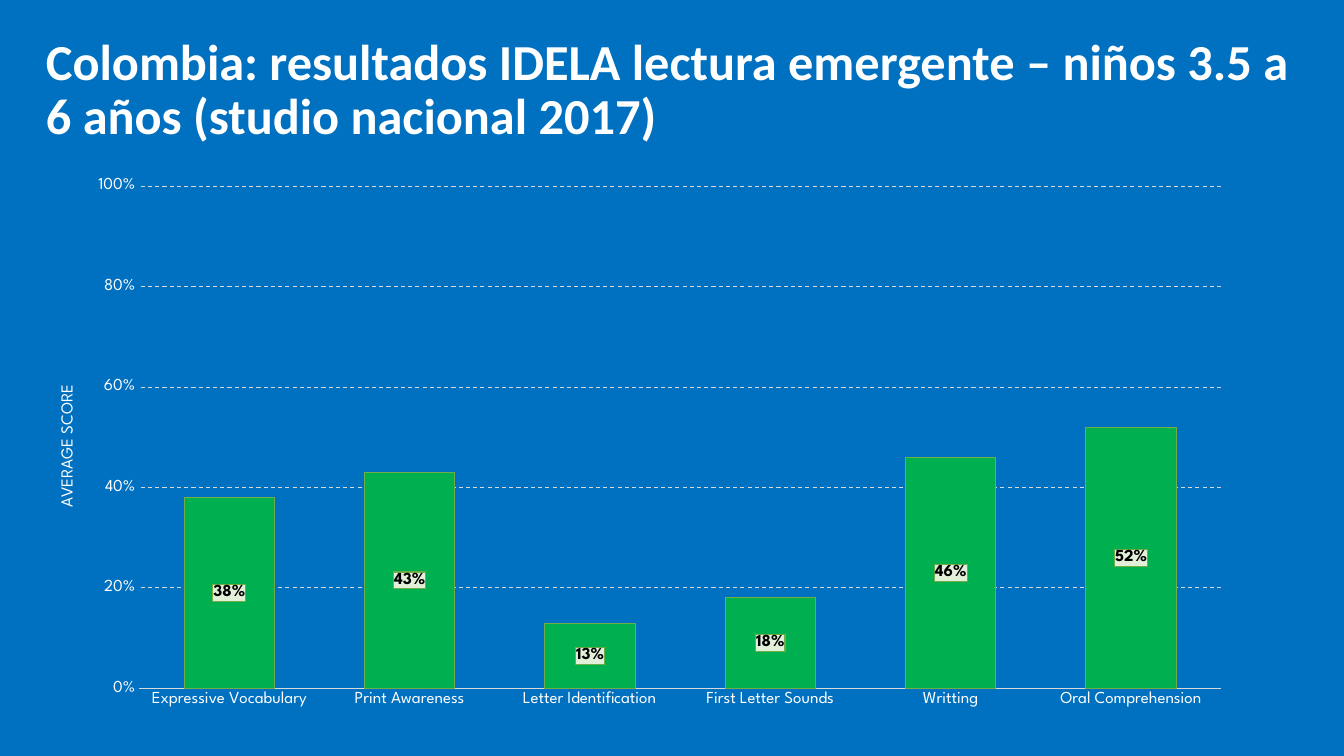
from lxml import etree
from pptx import Presentation
from pptx.chart.data import CategoryChartData
from pptx.dml.color import RGBColor
from pptx.enum.chart import XL_CHART_TYPE as ChartType
from pptx.enum.chart import XL_LABEL_POSITION as LabelPosition
from pptx.enum.chart import XL_TICK_MARK as TickMark
from pptx.enum.dml import MSO_LINE_DASH_STYLE as Dash
from pptx.enum.text import MSO_ANCHOR as Anchor
from pptx.oxml import parse_xml
from pptx.oxml.ns import nsdecls, qn
from pptx.util import Emu, Pt

# Content
TITLE = "Colombia: resultados IDELA lectura emergente – niños 3.5 a 6 años (studio nacional 2017)"
AXIS_TITLE = "AVERAGE SCORE"
SERIES_NAME = "Series 1"
SCORES = {
    "Expressive Vocabulary": 0.38,
    "Print Awareness": 0.43,
    "Letter Identification": 0.13,
    "First Letter Sounds": 0.18,
    "Writting": 0.46,
    "Oral Comprehension": 0.52,
}

# Lengths in px: left, top, width, height
PX = 9071
SLIDE_SIZE = (1344, 756)
TITLE_BOX = (36, 18, 1270, 146)
CHART_BOX = (56, 164, 1189, 558)
PLOT_LAYOUT = {"x": 0.07, "y": 0.04, "w": 0.91, "h": 0.9}
AXIS_TITLE_LAYOUT = {"x": 0.0, "y": 0.39}


class Theme:
    background = "0070C0"
    text = "FFFFFF"
    rule = "D9D9D9"
    bar = "00B050"
    bar_line = "70AD47"
    label_fill = "E2F0D9"
    label_text = "000000"
    title_font = "Calibri"
    chart_font = "League Spartan"
    title_size = 36
    chart_size = 12
    line_width = 0.75


def px(values):
    return [Emu(value * PX) for value in values]


def style_font(font, name=Theme.chart_font, size=Theme.chart_size,
               color=Theme.text, bold=False):
    font.name = name
    font.size = Pt(size)
    font.bold = bold
    font.color.rgb = RGBColor.from_string(color)


def write_text(text_frame, text, line_spacing=None, **font_format):
    paragraph = text_frame.paragraphs[0]
    paragraph.line_spacing = line_spacing
    run = paragraph.add_run()
    run.text = text
    style_font(run.font, **font_format)


def style_line(line, color):
    line.color.rgb = RGBColor.from_string(color)
    line.width = Pt(Theme.line_width)


def set_layout(parent, index, fractions, inner=False):
    """Place a chart part by fractions of the chart's size."""
    for old_layout in parent.findall(qn("c:layout")):
        parent.remove(old_layout)
    layout = parse_xml(f"<c:layout {nsdecls('c')}><c:manualLayout/></c:layout>")
    settings = [("layoutTarget", "inner")] if inner else []
    settings += [(f"{key}Mode", "edge") for key in "xy"]
    settings += fractions.items()
    for tag, value in settings:
        etree.SubElement(layout[0], qn(f"c:{tag}")).set("val", str(value))
    parent.insert(index, layout)


# Slide
presentation = Presentation()
presentation.slide_width, presentation.slide_height = px(SLIDE_SIZE)
slide = presentation.slides.add_slide(presentation.slide_layouts[6])
slide.background.fill.solid()
slide.background.fill.fore_color.rgb = RGBColor.from_string(Theme.background)

# Title
title_frame = slide.shapes.add_textbox(*px(TITLE_BOX)).text_frame
title_frame.word_wrap = True
title_frame.vertical_anchor = Anchor.MIDDLE
write_text(title_frame, TITLE, line_spacing=0.9, name=Theme.title_font,
           size=Theme.title_size, bold=True)

# Chart
chart_data = CategoryChartData(number_format="0%")
chart_data.categories = list(SCORES)
chart_data.add_series(SERIES_NAME, list(SCORES.values()))
chart = slide.shapes.add_chart(
    ChartType.COLUMN_CLUSTERED, *px(CHART_BOX), chart_data).chart
chart.has_legend = False
chart.has_title = False
style_font(chart.font)
plot_area = chart.plots[0]._element.getparent()
set_layout(plot_area, 0, PLOT_LAYOUT, inner=True)

# Axes
category_axis, value_axis = chart.category_axis, chart.value_axis
for axis in (category_axis, value_axis):
    axis.major_tick_mark = axis.minor_tick_mark = TickMark.NONE
    style_font(axis.tick_labels.font)
style_line(category_axis.format.line, Theme.rule)
value_axis.format.line.fill.background()
value_axis.minimum_scale, value_axis.maximum_scale = 0, 1
value_axis.major_unit = 0.2
value_axis.tick_labels.number_format = "0%"
value_axis.tick_labels.number_format_is_linked = False
value_axis.has_major_gridlines = True
gridline = value_axis.major_gridlines.format.line
style_line(gridline, Theme.rule)
gridline.dash_style = Dash.DASH
write_text(value_axis.axis_title.text_frame, AXIS_TITLE)
set_layout(value_axis.axis_title._element, 1, AXIS_TITLE_LAYOUT)

# Bars
plot = chart.plots[0]
plot.vary_by_categories = False
plot.gap_width, plot.overlap = 100, -24
series = plot.series[0]
series.format.fill.solid()
series.format.fill.fore_color.rgb = RGBColor.from_string(Theme.bar)
style_line(series.format.line, Theme.bar_line)

# Bar labels, boxed
labels = series.data_labels
labels.show_value = True
labels.position = LabelPosition.CENTER
labels.number_format = "0%"
labels.number_format_is_linked = False
style_font(labels.font, color=Theme.label_text, bold=True)
label_box = parse_xml(
    f"<c:spPr {nsdecls('c', 'a')}>"
    f'<a:solidFill><a:srgbClr val="{Theme.label_fill}"/></a:solidFill>'
    f'<a:ln w="{Pt(Theme.line_width)}"><a:solidFill>'
    f'<a:srgbClr val="{Theme.bar_line}"/></a:solidFill></a:ln></c:spPr>')
labels._element.find(qn("c:numFmt")).addnext(label_box)

presentation.save("out.pptx")
